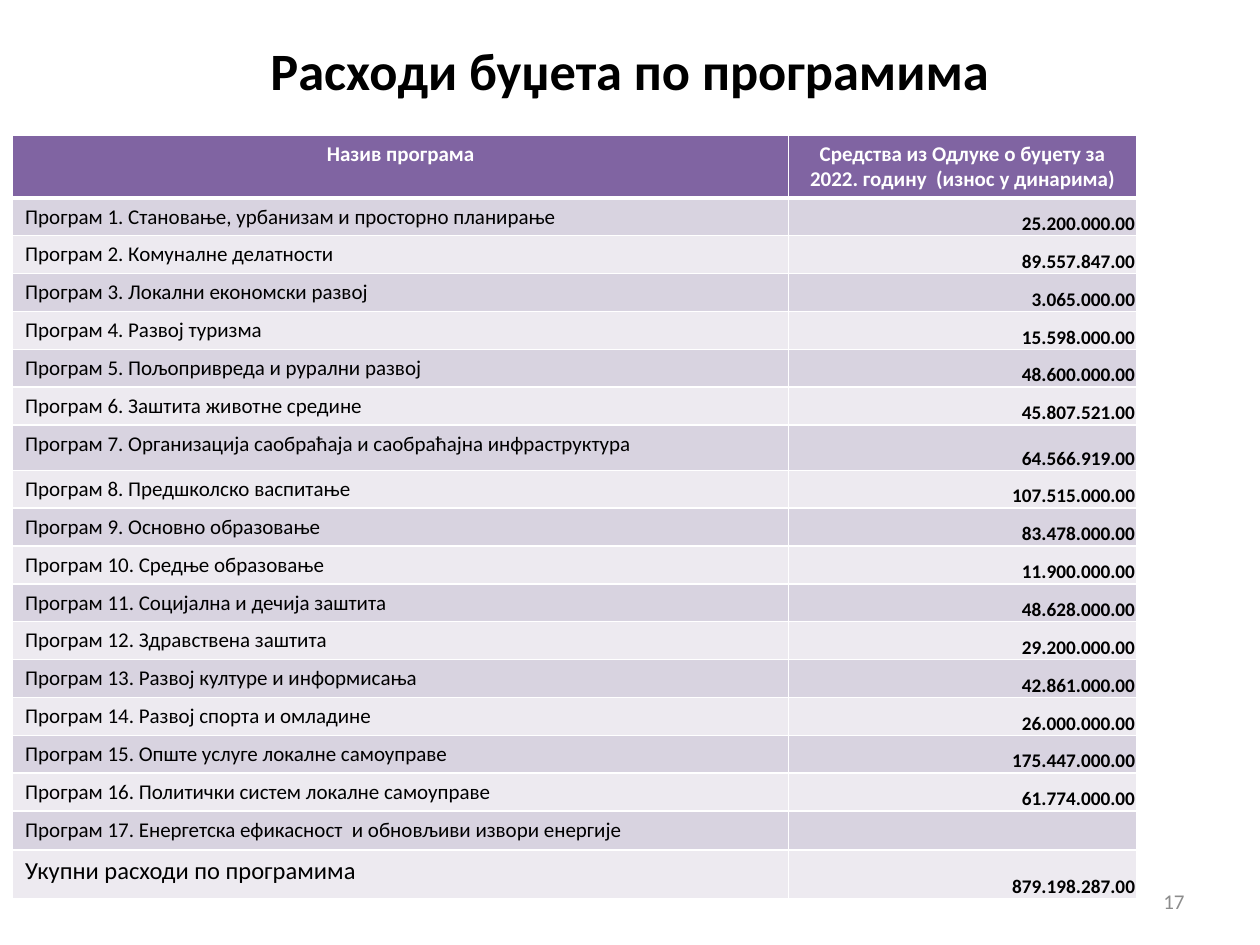
from lxml import etree
from pptx import Presentation
from pptx.dml.color import RGBColor
from pptx.enum.text import MSO_ANCHOR, PP_ALIGN
from pptx.oxml.ns import qn
from pptx.util import Inches, Pt

LEFT, MID, RIGHT = PP_ALIGN.LEFT, PP_ALIGN.CENTER, PP_ALIGN.RIGHT
TOP, CENTER, BOTTOM = MSO_ANCHOR.TOP, MSO_ANCHOR.MIDDLE, MSO_ANCHOR.BOTTOM
BLACK = RGBColor(0x00, 0x00, 0x00)
WHITE = RGBColor(0xFF, 0xFF, 0xFF)
GRAY = RGBColor(0x8C, 0x8C, 0x8C)
PURPLE = RGBColor(0x80, 0x64, 0xA2)
BANDS = RGBColor(0xD8, 0xD3, 0xE0), RGBColor(0xED, 0xEA, 0xF0)
FONT = "Calibri"

TITLE = "Расходи буџета по програмима"
PAGE = "17"
HEADS = ("Назив програма",
         "Средства из Одлуке о буџету за 2022. годину  (износ у динарима)")
ITEMS = [
    ("Становање, урбанизам и просторно планирање", "25.200.000.00"),
    ("Комуналне делатности", "89.557.847.00"),
    ("Локални економски развој", "3.065.000.00"),
    ("Развој туризма", "15.598.000.00"),
    ("Пољопривреда и рурални развој", "48.600.000.00"),
    ("Заштита животне средине", "45.807.521.00"),
    ("Организација саобраћаја и саобраћајна инфраструктура", "64.566.919.00"),
    ("Предшколско васпитање", "107.515.000.00"),
    ("Основно образовање", "83.478.000.00"),
    ("Средње образовање", "11.900.000.00"),
    ("Социјална и дечија заштита", "48.628.000.00"),
    ("Здравствена заштита", "29.200.000.00"),
    ("Развој културе и информисања", "42.861.000.00"),
    ("Развој спорта и омладине", "26.000.000.00"),
    ("Опште услуге локалне самоуправе", "175.447.000.00"),
    ("Политички систем локалне самоуправе", "61.774.000.00"),
    ("Енергетска ефикасност  и обновљиви извори енергије", ""),
]
TOTAL = ("Укупни расходи по програмима", "879.198.287.00")
COLS = (6.16, 2.76)
ROW = 0.29
TALL = {0: 0.49, 7: 0.36, 17: 0.31, 18: 0.39}


def write(frame, text, size, color, bold=False, align=LEFT):
    para = frame.paragraphs[0]
    para.alignment = align
    if text:
        run = para.add_run()
        run.text = text
        font = run.font
        font.name, font.size, font.bold = FONT, Pt(size), bold
        font.color.rgb = color


def border(cell, base):
    props = cell._tc.get_or_add_tcPr()
    for side, width in (("L", 1), ("R", 1), ("T", 1), ("B", base)):
        line = etree.SubElement(props, qn(f"a:ln{side}"), w=str(Pt(width)))
        fill = etree.SubElement(line, qn("a:solidFill"))
        etree.SubElement(fill, qn("a:srgbClr"), val=str(WHITE))


def paint(cell, fill, base=1):
    border(cell, base)
    cell.fill.solid()
    cell.fill.fore_color.rgb = fill


def build():
    deck = Presentation()
    deck.slide_width, deck.slide_height = Inches(10), Inches(7.5)
    slide = deck.slides.add_slide(deck.slide_layouts[5])

    title = slide.shapes.title
    title.left, title.top = Inches(0.74), Inches(0.13)
    title.width, title.height = Inches(8.52), Inches(0.85)
    title.text_frame.vertical_anchor = CENTER
    write(title.text_frame, TITLE, 30, BLACK, True, MID)

    page = slide.shapes.add_textbox(
        Inches(7.17), Inches(6.95), Inches(2.33), Inches(0.4)).text_frame
    page.word_wrap = True
    page.vertical_anchor = CENTER
    write(page, PAGE, 12, GRAY, align=RIGHT)

    rows = [(f"Програм {num}. {name}", sum_)
            for num, (name, sum_) in enumerate(ITEMS, 1)] + [TOTAL]
    highs = [TALL.get(i, ROW) for i in range(len(rows) + 1)]
    table = slide.shapes.add_table(
        len(highs), len(COLS), Inches(0.1), Inches(1.07),
        Inches(sum(COLS)), Inches(sum(highs))).table
    for col, width in zip(table.columns, COLS):
        col.width = Inches(width)
    for row, high in zip(table.rows, highs):
        row.height = Inches(high)

    for i, head in enumerate(HEADS):
        cell = table.cell(0, i)
        paint(cell, PURPLE, 3)
        write(cell.text_frame, head, 12, WHITE, True, MID)

    for i, (name, sum_) in enumerate(rows, 1):
        label, value = table.cell(i, 0), table.cell(i, 1)
        for cell in (label, value):
            paint(cell, BANDS[(i - 1) % 2])
        label.vertical_anchor = TOP
        write(label.text_frame, name, 14 if i == len(rows) else 12, BLACK)
        value.vertical_anchor = BOTTOM
        value.margin_left = value.margin_right = value.margin_top = Inches(0.01)
        value.margin_bottom = 0
        write(value.text_frame, sum_, 11, BLACK, True, RIGHT)

    deck.save("out.pptx")


if __name__ == "__main__":
    build()
